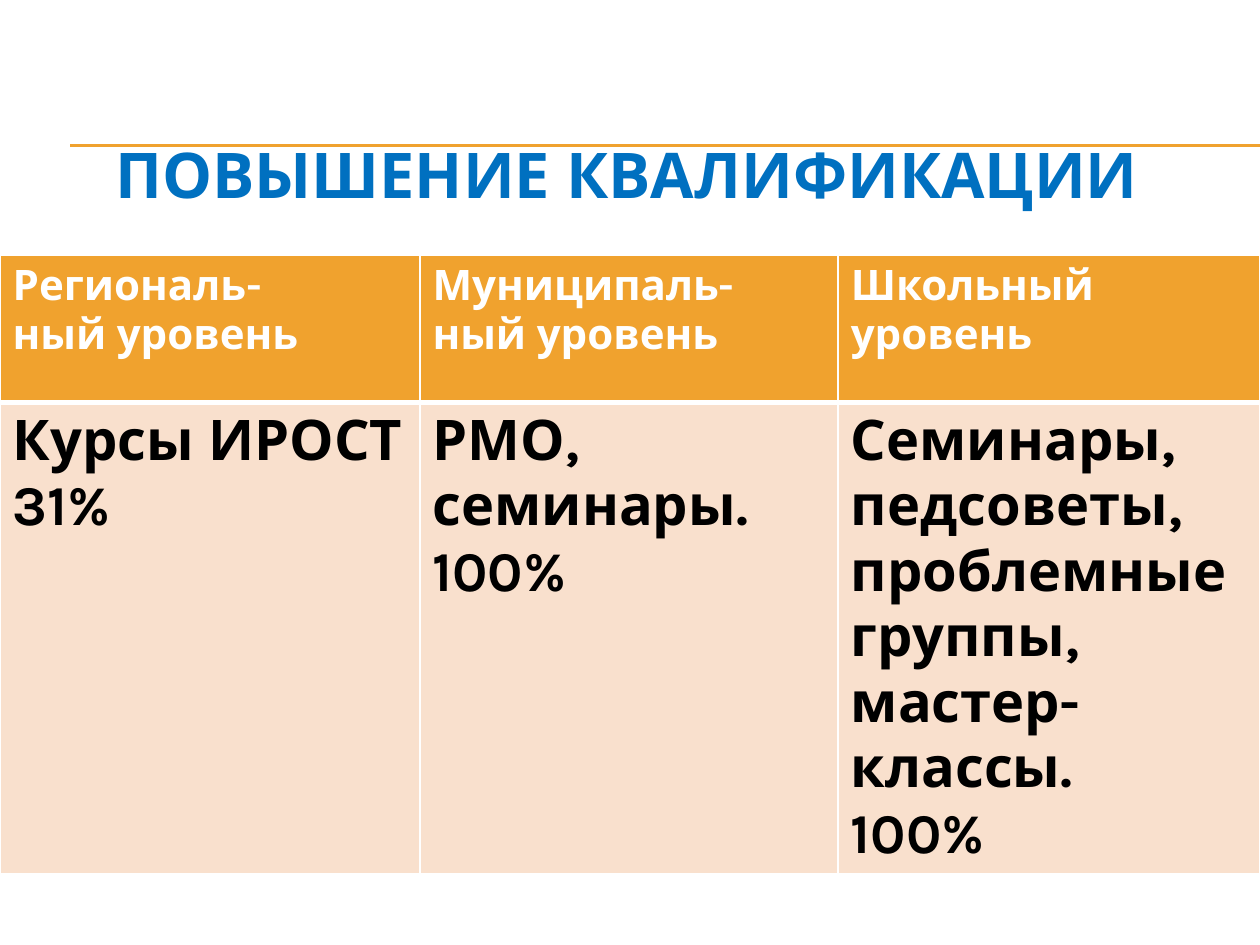
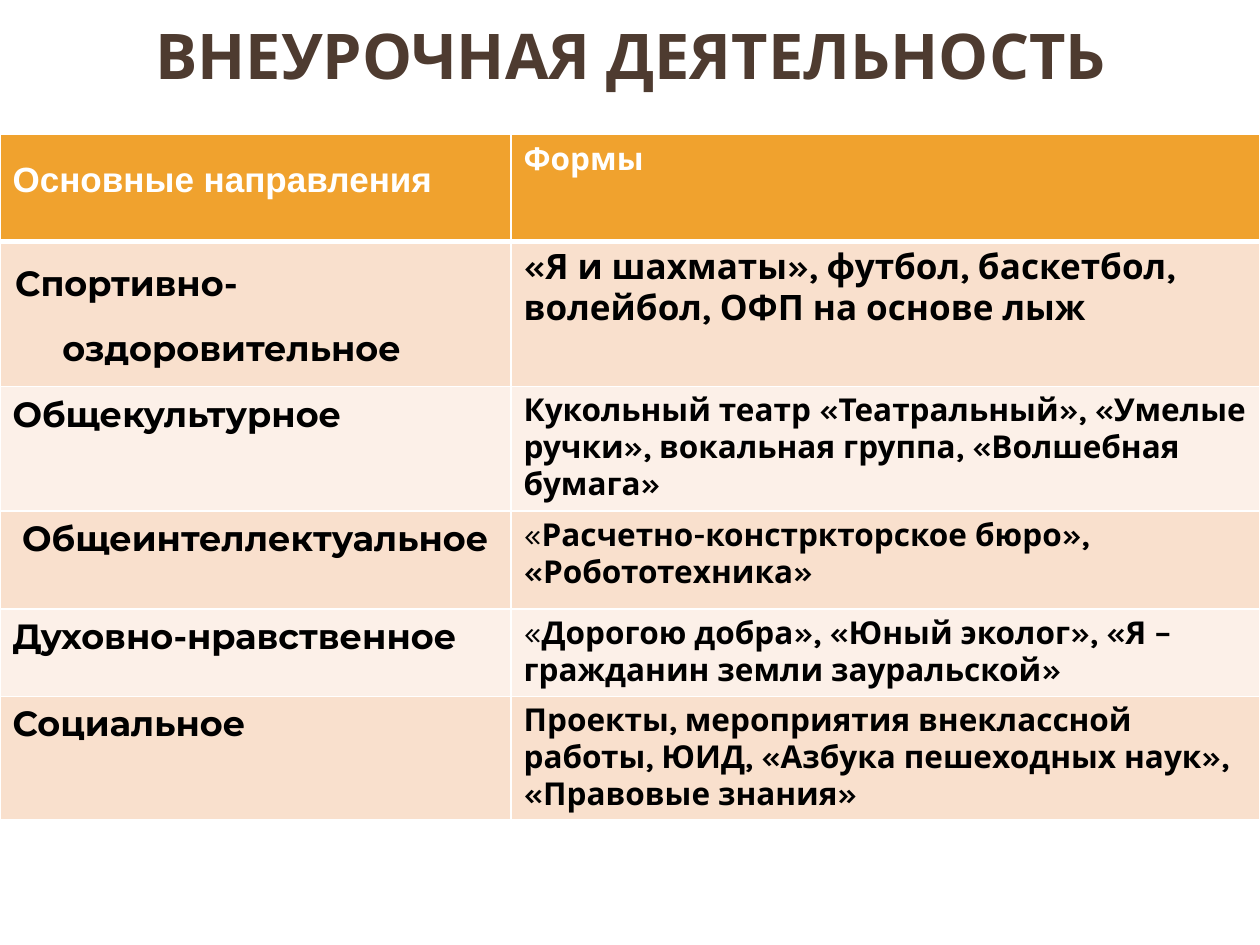
from dataclasses import dataclass

from lxml import etree
from pptx import Presentation
from pptx.dml.color import RGBColor
from pptx.enum.shapes import MSO_CONNECTOR
from pptx.enum.text import MSO_ANCHOR, MSO_AUTO_SIZE, PP_ALIGN
from pptx.oxml.ns import qn
from pptx.slide import Slide, SlideLayout
from pptx.table import _Cell
from pptx.util import Pt

STRAIGHT = MSO_CONNECTOR.STRAIGHT
MIDDLE = MSO_ANCHOR.MIDDLE
NO_AUTOFIT = MSO_AUTO_SIZE.NONE
CENTER = PP_ALIGN.CENTER

ORANGE = RGBColor(0xF0, 0xA2, 0x2E)
PEACH = RGBColor(0xF9, 0xE0, 0xCD)
CREAM = RGBColor(0xFC, 0xF0, 0xE8)
BLUE = RGBColor(0x00, 0x70, 0xC0)
BROWN = RGBColor(0x4E, 0x3B, 0x30)
WHITE = RGBColor(0xFF, 0xFF, 0xFF)
BLACK = RGBColor(0x00, 0x00, 0x00)

KARLA = "Karla"
MONTSERRAT = "Montserrat"
ARIAL = "Arial"

PAGE_WIDTH, PAGE_HEIGHT = 720, 540
RULE_LEFT = 40.3
RULE_TOPS = (82.8, 83.5)
THIN, THICK = 1, 3


@dataclass(frozen=True)
class Entry:
    lines: tuple[str, ...]
    size: float
    font: str = KARLA
    light_start: str = ""
    left: float = 0
    hanging: float = 0
    spacing: float = 1
    snug: bool = False


@dataclass(frozen=True)
class Title:
    text: str
    color: RGBColor
    box: tuple[float, float, float, float]


@dataclass(frozen=True)
class Grid:
    top: float
    columns: tuple[float, ...]
    heights: tuple[float, ...]
    rows: tuple[tuple[Entry, ...], ...]


def heading(*lines: str) -> Entry:
    return Entry(lines, 24)


def level(*lines: str) -> Entry:
    return Entry(lines, 32)


def direction(text: str, left: float = 0) -> Entry:
    return Entry((text,), 20, MONTSERRAT, left=left)


def forms(text: str, size: float = 18, light_start: str = "") -> Entry:
    return Entry((text,), size, light_start=light_start)


TRAINING_TITLE = Title("ПОВЫШЕНИЕ КВАЛИФИКАЦИИ", BLUE, (36, 73.5, 644.5, 50.5))
TRAINING = Grid(
    146, (240, 239, 241), (84, 269),
    (
        (
            heading("Региональ-", "ный уровень"),
            heading("Муниципаль-", "ный уровень"),
            heading("Школьный уровень"),
        ),
        (
            level("Курсы ИРОСТ", "31%"),
            level("РМО,", "семинары.", "100%"),
            level("Семинары,", "педсоветы,",
                  "проблемные группы, мастер-классы.", "100%"),
        ),
    ),
)

ACTIVITY_TITLE = Title("ВНЕУРОЧНАЯ ДЕЯТЕЛЬНОСТЬ", BROWN, (36.5, 0, 648, 62.5))
ACTIVITIES = Grid(
    77, (292, 428), (61, 83, 71, 56, 50, 70),
    (
        (
            Entry(("Основные направления",), 20, ARIAL,
                  left=27, hanging=27, spacing=1.5),
            forms("Формы"),
        ),
        (
            Entry(("Спортивно-оздоровительное",), 20, MONTSERRAT,
                  left=27, hanging=27, spacing=1.5, snug=True),
            forms("«Я и шахматы», футбол, баскетбол, волейбол, "
                  "ОФП на основе лыж", 20),
        ),
        (
            direction("Общекультурное"),
            forms("Кукольный театр «Театральный», «Умелые ручки», "
                  "вокальная группа, «Волшебная бумага»"),
        ),
        (
            direction("Общеинтеллектуальное", left=5.5),
            forms("Расчетно-констркторское бюро», «Робототехника»",
                  light_start="«"),
        ),
        (
            direction("Духовно-нравственное"),
            forms("Дорогою добра», «Юный эколог», "
                  "«Я – гражданин земли зауральской»", light_start="«"),
        ),
        (
            direction("Социальное"),
            forms("Проекты, мероприятия внеклассной работы, ЮИД, "
                  "«Азбука пешеходных наук», «Правовые знания»"),
        ),
    ),
)


def add_layout_rules(layout: SlideLayout, page: Slide) -> None:
    for top in RULE_TOPS:
        rule = page.shapes.add_connector(
            STRAIGHT, Pt(RULE_LEFT), Pt(top), Pt(PAGE_WIDTH), Pt(top))
        rule.line.color.rgb = ORANGE
        rule.line.width = Pt(0.75)
        etree.SubElement(rule._element.spPr, qn("a:effectLst"))
        layout.shapes.element.append(rule._element)


def set_title(page: Slide, title: Title) -> None:
    box = page.shapes.title
    box.left, box.top, box.width, box.height = map(Pt, title.box)
    frame = box.text_frame
    frame.text = title.text
    frame.auto_size = NO_AUTOFIT
    frame.vertical_anchor = MIDDLE
    para = frame.paragraphs[0]
    para.alignment = CENTER
    para.font.name = KARLA
    para.font.size = Pt(36)
    para.font.bold = True
    para.font.color.rgb = title.color


def set_borders(cell: _Cell, top: float, bottom: float) -> None:
    properties = cell._tc.get_or_add_tcPr()
    widths = {"lnL": THIN, "lnR": THIN, "lnT": top, "lnB": bottom}
    for position, (side, width) in enumerate(widths.items()):
        edge = etree.Element(qn(f"a:{side}"), w=str(Pt(width)))
        fill = etree.SubElement(edge, qn("a:solidFill"))
        etree.SubElement(fill, qn("a:srgbClr"), val=str(WHITE))
        properties.insert(position, edge)


def fill_cell(cell: _Cell, entry: Entry, color: RGBColor) -> None:
    if entry.snug:
        cell.margin_left = cell.margin_right = Pt(8.64)
        cell.margin_top = cell.margin_bottom = 0
    frame = cell.text_frame
    for number, line in enumerate(entry.lines):
        para = frame.add_paragraph() if number else frame.paragraphs[0]
        para.line_spacing = entry.spacing
        para.font.name = entry.font
        para.font.size = Pt(entry.size)
        para.font.color.rgb = color
        if entry.left:
            properties = para._p.get_or_add_pPr()
            properties.set("marL", str(Pt(entry.left)))
            properties.set("indent", str(-Pt(entry.hanging)))
        if entry.light_start:
            opening = para.add_run()
            opening.text = entry.light_start
            opening.font.bold = False
            span = para.add_run()
            span.text = line
            span.font.bold = True
        else:
            para.add_run().text = line
            para.font.bold = True


def add_grid(page: Slide, grid: Grid) -> None:
    table = page.shapes.add_table(
        len(grid.heights), len(grid.columns), 0, Pt(grid.top),
        Pt(sum(grid.columns)), Pt(sum(grid.heights))).table
    for column, width in zip(table.columns, grid.columns):
        column.width = Pt(width)
    for row, height in zip(table.rows, grid.heights):
        row.height = Pt(height)
    for index, entries in enumerate(grid.rows):
        is_header = index == 0
        background = ORANGE if is_header else PEACH if index % 2 else CREAM
        for column, entry in enumerate(entries):
            cell = table.cell(index, column)
            cell.fill.solid()
            cell.fill.fore_color.rgb = background
            set_borders(cell, THICK if index == 1 else THIN,
                        THICK if is_header else THIN)
            fill_cell(cell, entry, WHITE if is_header else BLACK)


def main() -> None:
    deck = Presentation()
    deck.slide_width, deck.slide_height = Pt(PAGE_WIDTH), Pt(PAGE_HEIGHT)
    layout = deck.slide_layouts.get_by_name("Title Only")
    slides = ((TRAINING_TITLE, TRAINING), (ACTIVITY_TITLE, ACTIVITIES))
    for number, (title, grid) in enumerate(slides):
        page = deck.slides.add_slide(layout)
        if number == 0:
            add_layout_rules(layout, page)
        set_title(page, title)
        add_grid(page, grid)
    deck.save("out.pptx")


if __name__ == "__main__":
    main()
